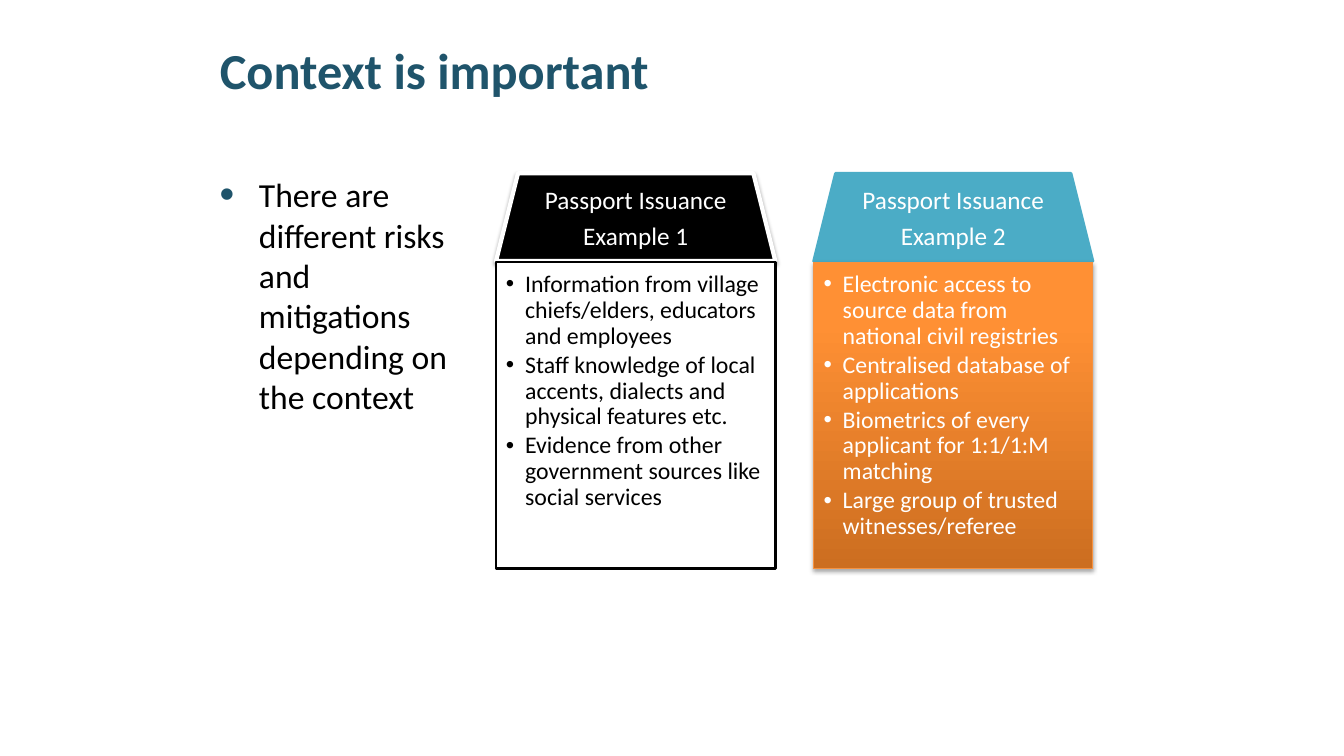
from copy import deepcopy

from pptx import Presentation
from pptx.dml.color import RGBColor as RGB
from pptx.enum.shapes import MSO_SHAPE as SHAPE
from pptx.enum.text import MSO_ANCHOR as ANCHOR, MSO_AUTO_SIZE as AUTO, PP_ALIGN as ALIGN
from pptx.oxml import parse_xml
from pptx.oxml.ns import nsdecls
from pptx.util import Emu, Pt

PX = 9144  # 100 px to the inch
COLORS = {"navy": "1F546B", "black": "000000", "white": "FFFFFF", "teal": "4BACC6",
          "edge": "F69240", "dark": "CC6E20", "mid": "FF9034", "light": "FF9136"}
GRADIENT = [(0, "dark"), (0.8, "mid"), (1, "light")]


def px(*lengths):
    return [Emu(n * PX) for n in lengths]


def write(sp, lines, frame, para, font, color, bullet=None):
    """Fill a shape with paragraphs; bullet is (indent px, size %, colour)."""
    tf = sp.text_frame
    for name, value in frame.items():
        setattr(tf, name, value)
    for i, line in enumerate(lines):
        p = tf.paragraphs[0] if i == 0 else tf.add_paragraph()
        for name, value in para.items():
            setattr(p, name, value)
        r = p.add_run()
        r.text = line
        for name, value in {"name": "Calibri", **font}.items():
            setattr(r.font, name, value)
        r.font.color.rgb = RGB.from_string(COLORS[color])
        if bullet:
            indent, size, tint = bullet
            pPr = p._p.get_or_add_pPr()
            pPr.set("marL", str(indent * PX))
            pPr.set("indent", str(-indent * PX))
            for xml in (f'<a:buClr {nsdecls("a")}><a:srgbClr val="{COLORS[tint]}"/></a:buClr>',
                        f'<a:buSzPct {nsdecls("a")} val="{size * 1000}"/>',
                        f'<a:buFont {nsdecls("a")} typeface="Arial"/>',
                        f'<a:buChar {nsdecls("a")} char="•"/>'):
                pPr.append(parse_xml(xml))


prs = Presentation()
prs.slide_width, prs.slide_height = px(1333, 750)
s = prs.slides.add_slide(prs.slide_layouts[5])

title = s.shapes.title
title.left, title.top, title.width, title.height = px(208, 36, 858, 65)
write(title, ["Context is important"],
      {"word_wrap": True, "auto_size": AUTO.NONE, "vertical_anchor": ANCHOR.MIDDLE},
      {"alignment": ALIGN.LEFT}, {"size": Pt(36), "bold": True}, "navy")

body = s.shapes.add_textbox(*px(208, 168, 261, 453))
write(body, ["There are different risks and mitigations depending on the context"],
      {"word_wrap": True}, {"space_before": Pt(6), "space_after": Pt(4.5)},
      {"size": Pt(24)}, "black", (39, 125, "navy"))

# Each part: fill, line colour, line width, shadow (opacity %, distance pt)
examples = [
    {"name": "Example 1", "left": 492, "text": "black",
     "head": ("black", "white", 3, (38, 1.6)),
     "box": ("white", "black", 2, None),
     "points": ["Information from village chiefs/elders, educators and employees",
                "Staff knowledge of local accents, dialects and physical features etc.",
                "Evidence from other government sources like social services"]},
    {"name": "Example 2", "left": 807, "text": "white",
     "head": ("teal", "teal", 2, None),
     "box": (GRADIENT, "edge", 0.75, (35, 1.8)),
     "points": ["Electronic access to source data from national civil registries",
                "Centralised database of applications",
                "Biometrics of every applicant for 1:1/1:M matching",
                "Large group of trusted witnesses/referee"]},
]
head_insets = dict(zip(("margin_left", "margin_top", "margin_right", "margin_bottom"),
                       px(14, 8, 14, 8)))
box_insets = dict(zip(head_insets, px(10, 10, 13, 15)))

for ex in examples:
    head = s.shapes.add_shape(SHAPE.TRAPEZOID, *px(ex["left"], 172, 277, 87))
    box = s.shapes.add_shape(SHAPE.RECTANGLE, *px(ex["left"], 260, 277, 304))
    for sp, (fill, line, width, shadow) in ((head, ex["head"]), (box, ex["box"])):
        if fill is GRADIENT:
            sp.fill.gradient()
            sp.fill.gradient_angle = 90
            gs_list = sp.fill._xPr.find(".//{*}gsLst")
            gs_list.append(deepcopy(gs_list[-1]))
            for stop, (position, color) in zip(sp.fill.gradient_stops, GRADIENT):
                stop.position = position
                stop.color.rgb = RGB.from_string(COLORS[color])
        else:
            sp.fill.solid()
            sp.fill.fore_color.rgb = RGB.from_string(COLORS[fill])
        sp.line.color.rgb = RGB.from_string(COLORS[line])
        sp.line.width = Pt(width)
        sp.shadow.inherit = False
        if shadow:
            opacity, distance = shadow
            sp._element.spPr.find("{*}effectLst").append(parse_xml(
                f'<a:outerShdw {nsdecls("a")} blurRad="{Pt(3.1)}" dist="{Pt(distance)}" '
                f'dir="5400000" rotWithShape="0"><a:srgbClr val="{COLORS["black"]}">'
                f'<a:alpha val="{opacity * 1000}"/></a:srgbClr></a:outerShdw>'))
    write(head, ["Passport Issuance", ex["name"]],
          {"word_wrap": True, "vertical_anchor": ANCHOR.MIDDLE, **head_insets},
          {"alignment": ALIGN.CENTER, "line_spacing": 0.9, "space_after": Pt(6)},
          {"size": Pt(18)}, "white")
    write(box, ex["points"],
          {"word_wrap": True, "vertical_anchor": ANCHOR.TOP, **box_insets},
          {"alignment": ALIGN.LEFT, "line_spacing": 0.9, "space_after": Pt(2.5)},
          {"size": Pt(17)}, ex["text"], (19, 100, ex["text"]))

prs.save("out.pptx")
